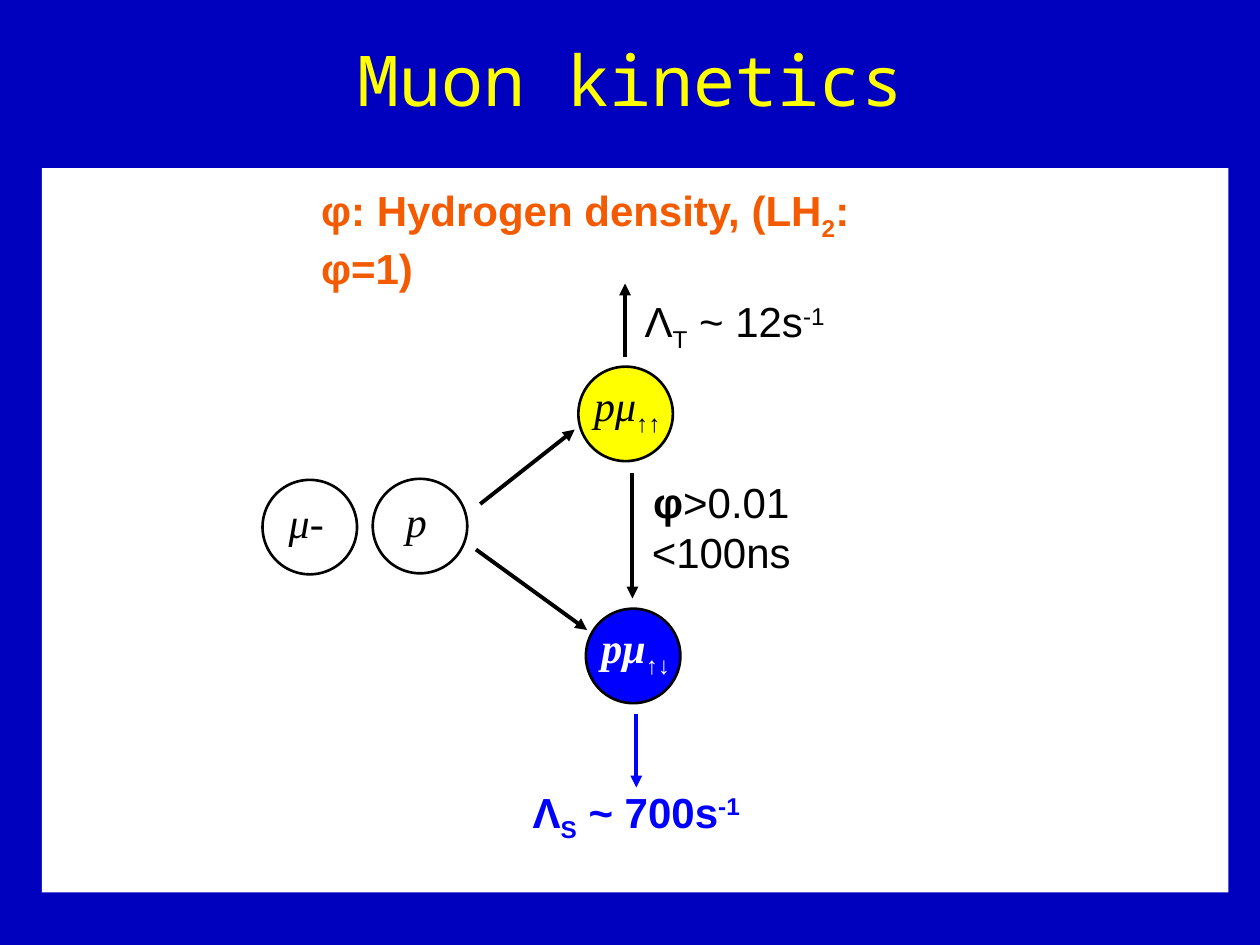
from lxml import etree
from pptx import Presentation
from pptx.dml.color import RGBColor
from pptx.enum.shapes import MSO_CONNECTOR, MSO_SHAPE
from pptx.enum.text import MSO_ANCHOR as ANCHOR, PP_ALIGN as ALIGN
from pptx.oxml.ns import qn
from pptx.util import Pt

NAVY = RGBColor(0x00, 0x00, 0xBF)
BLUE = RGBColor(0x00, 0x00, 0xFF)
YELLOW = RGBColor(0xFF, 0xFF, 0x00)
ORANGE = RGBColor(0xF4, 0x5A, 0x00)
BLACK = RGBColor(0x00, 0x00, 0x00)
WHITE = RGBColor(0xFF, 0xFF, 0xFF)
SANS, SERIF = "Arial", "Times New Roman"
SUB, SUPER = -25000, 30000
DIAMETER = 54

prs = Presentation()
prs.slide_width, prs.slide_height = Pt(720), Pt(540)
s = prs.slides.add_slide(prs.slide_layouts[5])
s.background.fill.solid()
s.background.fill.fore_color.rgb = NAVY


def add_text(box, lines, name, color, bold=False, italic=False, align=ALIGN.CENTER):
    tf = s.shapes.add_textbox(*map(Pt, box)).text_frame
    tf.word_wrap = False
    for i, runs in enumerate(lines):
        p = tf.add_paragraph() if i else tf.paragraphs[0]
        p.alignment = align
        p.font.name, p.font.size, p.font.color.rgb = name, Pt(24), color
        p.font.bold, p.font.italic = bold, italic
        for text, baseline in runs:
            r = p.add_run()
            r.text = text
            if baseline:
                r.font._element.set("baseline", str(baseline))
    return tf


def add_arrow(x1, y1, x2, y2, color=BLACK):
    c = s.shapes.add_connector(MSO_CONNECTOR.STRAIGHT, Pt(x1), Pt(y1), Pt(x2), Pt(y2))
    c.line.color.rgb = color
    c.line.width = Pt(2.25)
    etree.SubElement(c.line._get_or_add_ln(), qn("a:tailEnd"), type="triangle")
    etree.SubElement(c._element.spPr, qn("a:effectLst"))


panel = s.shapes.add_shape(MSO_SHAPE.RECTANGLE, Pt(24), Pt(96), Pt(678), Pt(414))
panel.shadow.inherit = False
panel.fill.solid()
panel.fill.fore_color.rgb = WHITE
panel.line.fill.background()

title = s.shapes.title
title.left, title.top, title.width, title.height = Pt(24), Pt(0), Pt(672), Pt(90)
tf = title.text_frame
tf.text = "Muon kinetics"
tf.vertical_anchor = ANCHOR.MIDDLE
p = tf.paragraphs[0]
p.alignment = ALIGN.CENTER
p.font.name, p.font.size, p.font.color.rgb = "Noto Sans Mono", Pt(40), YELLOW

tf = add_text((176.4, 102.2, 368.6, 36),
              [[("φ: Hydrogen density, (LH", 0), ("2", SUB), (": φ=1)", 0)]],
              SANS, ORANGE, bold=True, align=ALIGN.LEFT)
tf.word_wrap = True

particles = [
    (150, 274.2, None, [("μ-", 0)], 34.6, -2, BLACK, False),
    (213, 273.6, None, [("p", 0)], 26.6, -2, BLACK, False),
    (330.5, 209.5, YELLOW, [("pμ", 0), ("↑↑", SUB)], 60.5, 1, BLACK, False),
    (334.8, 347.8, BLUE, [("pμ", 0), ("↑↓", SUB)], 62, 1.5, WHITE, True),
]
for x, y, fill, label, width, shift, color, bold in particles:
    sp = s.shapes.add_shape(MSO_SHAPE.OVAL, Pt(x), Pt(y), Pt(DIAMETER), Pt(DIAMETER))
    sp.shadow.inherit = False
    if fill is None:
        sp.fill.background()
    else:
        sp.fill.solid()
        sp.fill.fore_color.rgb = fill
    sp.line.color.rgb = BLACK
    sp.line.width = Pt(1.5)
    left = x + (DIAMETER - width) / 2 + shift
    tf = add_text((left, y + 6, width, 36), [label], SERIF, color, bold, italic=True)
    tf.vertical_anchor = ANCHOR.MIDDLE

add_arrow(274.4, 288, 328.4, 245.5)
add_arrow(272, 314, 335.5, 360)
add_arrow(357.2, 203.8, 357.2, 162)
add_arrow(361.4, 270, 361.4, 342)
add_arrow(363.6, 408.2, 363.6, 450, BLUE)

add_text((359.3, 165.6, 121, 36),
         [[("Λ", 0), ("T", SUB), (" ~ 12s", 0), ("-1", SUPER)]], SANS, BLACK)
add_text((295.2, 445.7, 136.8, 36),
         [[("Λ", 0), ("S", SUB), (" ~ 700s", 0), ("-1", SUPER)]], SANS, BLUE, bold=True)
tf = add_text((365, 268.6, 94.3, 64.8),
              [[("φ", 0), (">0.01", 0)], [("<100ns", 0)]], SANS, BLACK)
tf.paragraphs[0].runs[0].font.bold = True

prs.save("out.pptx")
